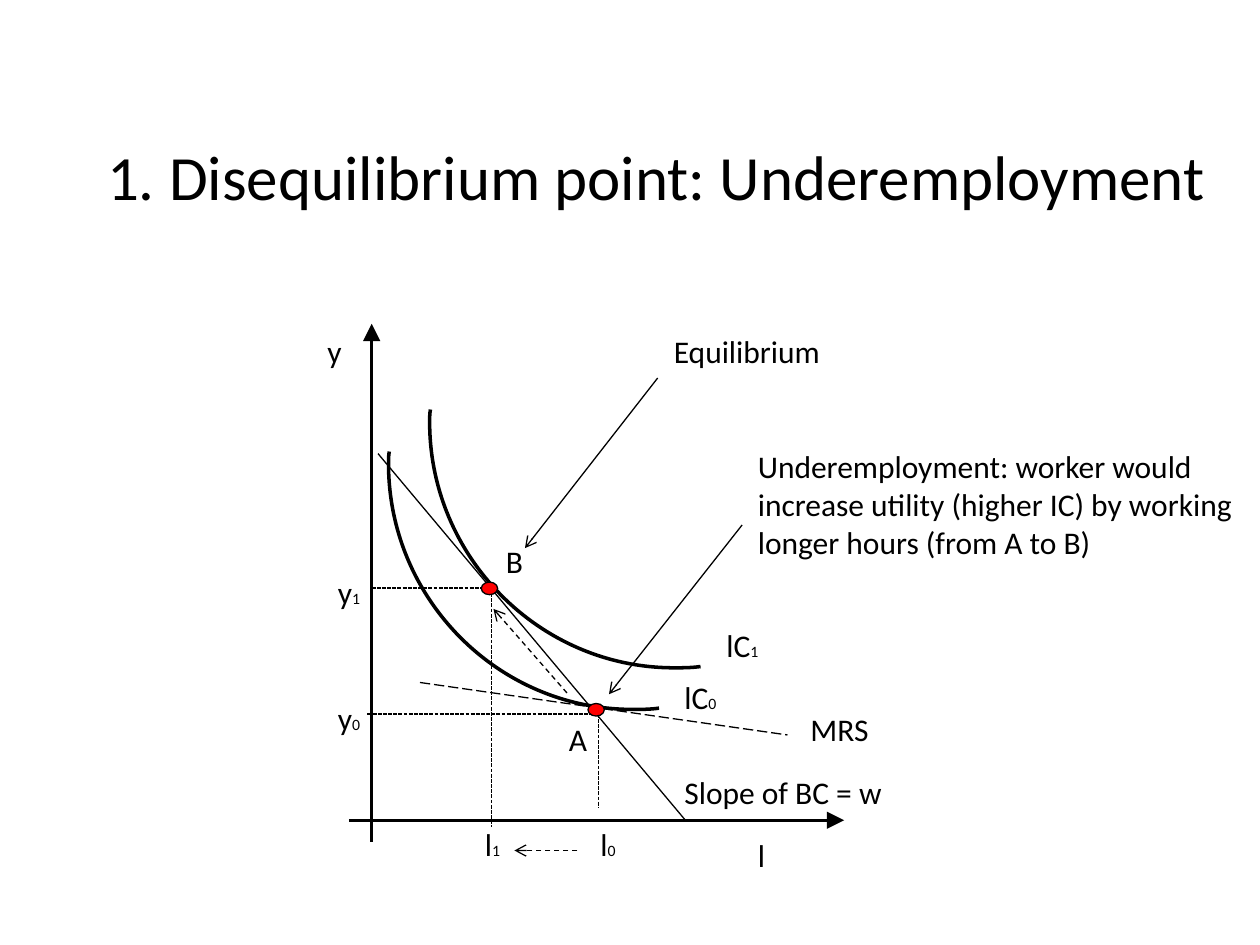
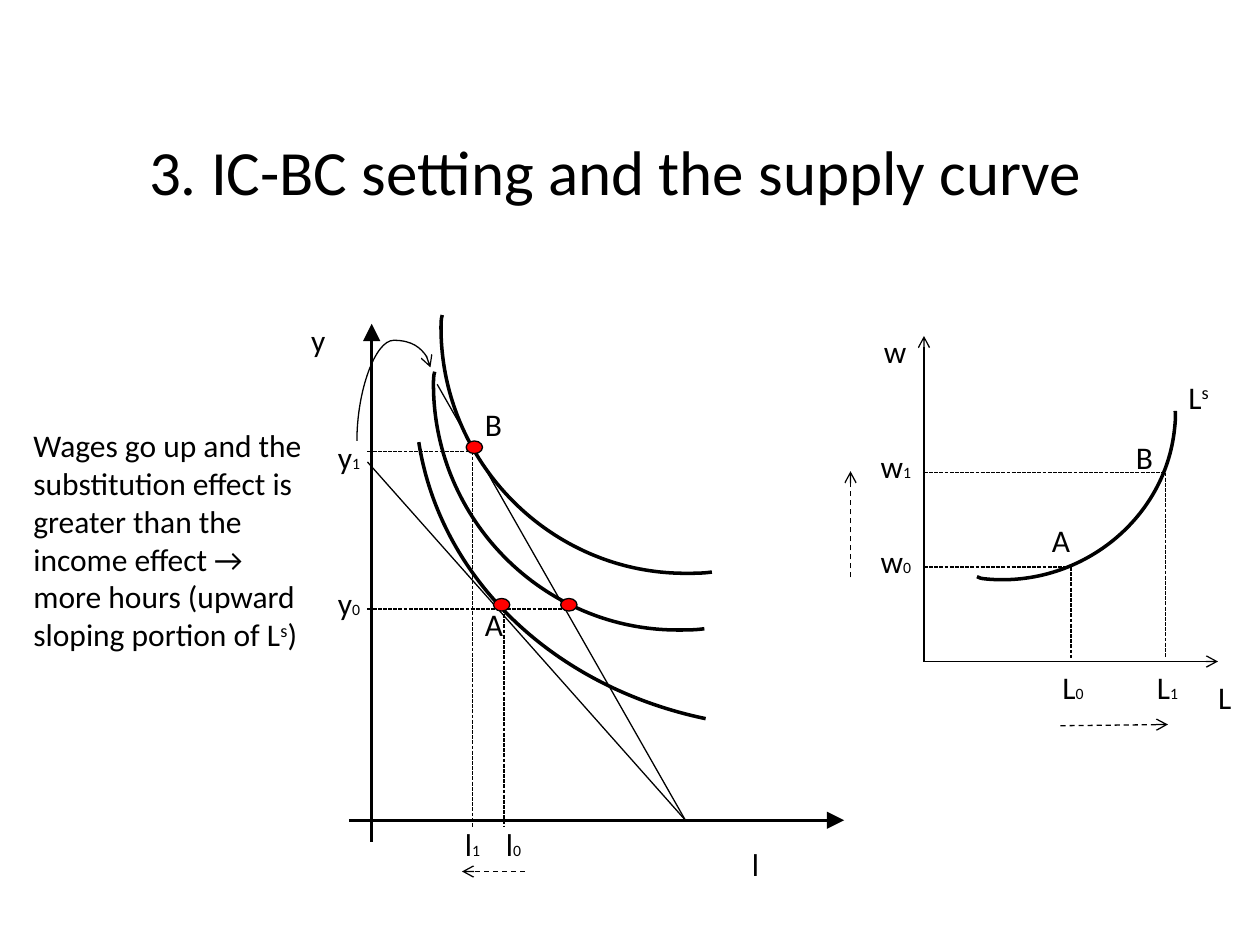
from lxml import etree
from pptx import Presentation
from pptx.dml.color import RGBColor
from pptx.enum.dml import MSO_LINE
from pptx.enum.shapes import MSO_CONNECTOR, MSO_SHAPE
from pptx.enum.text import MSO_ANCHOR, MSO_AUTO_SIZE, PP_ALIGN
from pptx.oxml.ns import qn
from pptx.util import Cm, Pt

STRAIGHT = MSO_CONNECTOR.STRAIGHT
CURVE = MSO_CONNECTOR.CURVE
ELLIPSE = MSO_SHAPE.OVAL
SQUARE_DOT = MSO_LINE.SQUARE_DOT
DASH = MSO_LINE.DASH
LONG_DASH = MSO_LINE.LONG_DASH
LEFT = PP_ALIGN.LEFT
TOP = MSO_ANCHOR.TOP
FIT_SHAPE = MSO_AUTO_SIZE.SHAPE_TO_FIT_TEXT

COLORS = {"ink": "000000", "point": "FF0000"}
INK = RGBColor.from_string(COLORS["ink"])
TITLE_FONT = {"name": "Calibri", "size": Pt(36), "bold": False}
LABEL_FONT = {"name": "Calibri", "size": Pt(18)}
TITLE_FRAME = {"word_wrap": False, "vertical_anchor": TOP, "auto_size": FIT_SHAPE}
AXIS_HEAD = {"type": "triangle", "w": "lg", "len": "lg"}
OPEN_HEAD = {"type": "arrow"}
LINE_STYLES = {
    "axis": (1.75, None, AXIS_HEAD),
    "guide": (0.75, SQUARE_DOT, None),
    "budget": (0.75, None, None),
    "tangent": (0.75, LONG_DASH, None),
    "pointer": (0.75, None, OPEN_HEAD),
    "shift": (0.75, DASH, OPEN_HEAD),
    "turn": (0.75, None, OPEN_HEAD),
}
POINT_WIDTH, POINT_HEIGHT = 0.13, 0.1
LABEL_HEIGHT = 0.4

AXES = [
    ("axis", 2.95, 6.68, 2.95, 2.57),
    ("axis", 2.77, 6.51, 6.7, 6.51),
]
INDIFFERENCE = [
    (0.21, 1.94), (0.14, 1.95), (0.07, 1.95), (0, 1.95), (-1.07, 1.95),
    (-1.94, 1.07), (-1.94, 0), (-1.94, -0.03), (-1.94, -0.07), (-1.93, -0.1),
]
LOW_INDIFFERENCE = [(5.41, 5.77), (4.25, 5.33), (3.5, 4.34), (3.5, 3.25)]
SUPPLY = [
    (9.29, 4.63), (9.24, 4.64), (9.19, 4.64), (9.14, 4.64), (8.41, 4.64),
    (7.81, 4.02), (7.8, 3.28), (7.8, 3.25), (7.8, 3.23), (7.81, 3.21),
]

SLIDES = [
    {
        "title": ("1. Disequilibrium point: Underemployment", 0.75, 1.04, 8.99, 0.71),
        "lines": [
            ("guide", 2.95, 4.67, 3.9, 4.67),
            ("guide", 3.9, 4.67, 3.9, 6.56),
            ("guide", 2.92, 5.67, 4.75, 5.67),
            ("guide", 4.75, 5.67, 4.75, 6.42),
            ("budget", 3, 3.6, 5.44, 6.51),
            ("tangent", 3.33, 5.42, 6.25, 5.83),
            ("pointer", 5.89, 4.17, 4.83, 5.51),
            ("pointer", 5.22, 3, 4.17, 4.35),
            ("shift", 4.5, 5.5, 3.92, 4.83),
            ("shift", 4.58, 6.75, 4.08, 6.75),
        ],
        "centers": [(5.02, 3.68), (5.35, 3.35)],
        "curves": [],
        "points": [(3.82, 4.62), (4.67, 5.58)],
        "labels": [
            ("y", 2.5, 2.58, 0.32),
            ("l", 5.92, 6.58, 0.26),
            ("MRS", 6.33, 5.58, 1.67),
            ("Slope of BC = w", 5.33, 6.08, 2),
            ("Underemployment: worker would increase utility (higher IC) "
             "by working longer hours (from A to B)", 5.92, 3.5, 4.08),
            ("Equilibrium", 5.25, 2.58, 4.08),
            ("l|_0", 4.67, 6.5, 0.32),
            ("l|_1", 3.75, 6.5, 0.32),
            ("lC|_0", 5.33, 5.33, 0.5),
            ("lC|_1", 5.67, 4.92, 0.5),
            ("A", 4.42, 5.67, 0.33),
            ("B", 3.92, 4.25, 0.33),
            ("y|_0", 2.58, 5.5, 0.38),
            ("y|_1", 2.58, 4.5, 0.38),
        ],
    },
    {
        "title": ("3. IC-BC setting and the supply curve", 1.08, 1, 7.72, 0.71),
        "lines": [
            ("budget", 2.92, 3.67, 5.44, 6.51),
            ("budget", 3.47, 3.05, 5.44, 6.51),
            ("turn", 3.42, 3.5, 2.83, 2.92),
            ("guide", 2.92, 4.83, 4.5, 4.83),
            ("guide", 4, 4.83, 4, 6.56),
            ("guide", 2.92, 3.58, 3.75, 3.58),
            ("guide", 3.75, 3.58, 3.75, 6.56),
            ("shift", 4.17, 6.92, 3.67, 6.92),
            ("pointer", 7.33, 5.25, 7.33, 2.67),
            ("pointer", 7.33, 5.25, 9.67, 5.25),
            ("guide", 7.33, 4.5, 8.5, 4.5),
            ("guide", 8.5, 4.5, 8.5, 5.22),
            ("guide", 7.33, 3.75, 9.25, 3.75),
            ("guide", 9.25, 3.75, 9.25, 5.22),
            ("shift", 8.42, 5.76, 9.27, 5.75),
            ("shift", 6.75, 4.58, 6.75, 3.74),
        ],
        "centers": [(5.44, 2.6), (5.38, 3.05)],
        "curves": [
            ((6.66, 3.25), LOW_INDIFFERENCE, 351.1),
            ((9.15, 3.27), SUPPLY, 276.3),
        ],
        "points": [(3.7, 3.5), (3.92, 4.75), (4.45, 4.75)],
        "labels": [
            ("y", 2.37, 2.5, 0.32),
            ("l", 5.87, 6.66, 0.26),
            ("Wages go up and the substitution effect is greater than the income "
             "effect → more hours (upward sloping portion of L|^s|)", 0.17, 3.33, 2.33),
            ("l|_0", 3.92, 6.5, 0.32),
            ("l|_1", 3.59, 6.5, 0.32),
            ("y|_0", 2.58, 4.58, 0.38),
            ("y|_1", 2.58, 3.43, 0.38),
            ("A", 3.75, 4.75, 0.33),
            ("B", 3.75, 3.17, 0.33),
            ("L", 9.57, 5.33, 0.31),
            ("w", 6.92, 2.58, 0.38),
            ("A", 8.25, 4.08, 0.33),
            ("B", 8.92, 3.43, 0.33),
            ("w|_0", 6.89, 4.25, 0.45),
            ("w|_1", 6.89, 3.5, 0.45),
            ("L|_1", 9.08, 5.25, 0.37),
            ("L|_0", 8.33, 5.25, 0.37),
            ("L|^s", 9.33, 2.95, 0.38),
        ],
    },
]


def place(*inches):
    twelfths = [round(value * 12) / 12 for value in inches]
    return [
        Cm(2.54 * (twelfth if abs(twelfth - value) < 0.005 else value))
        for twelfth, value in zip(twelfths, inches)
    ]


presentation = Presentation()
presentation.slide_width, presentation.slide_height = Cm(25.4), Cm(19.05)

for content in SLIDES:
    slide = presentation.slides.add_slide(presentation.slide_layouts[5])
    shapes = slide.shapes

    text, *box = content["title"]
    title = shapes.title
    title.left, title.top, title.width, title.height = place(*box)
    title.text_frame.text = text
    for name, value in TITLE_FRAME.items():
        setattr(title.text_frame, name, value)
    paragraph = title.text_frame.paragraphs[0]
    paragraph.alignment = LEFT
    for name, value in TITLE_FONT.items():
        setattr(paragraph.runs[0].font, name, value)
    paragraph.runs[0].font.color.rgb = INK

    for style, *ends in AXES + content["lines"]:
        width, dash, arrowhead = LINE_STYLES[style]
        kind = CURVE if style == "turn" else STRAIGHT
        connector = shapes.add_connector(kind, *place(*ends))
        connector.line.color.rgb = INK
        connector.line.width = Pt(width)
        if dash:
            connector.line.dash_style = dash
        properties = connector._element.spPr
        if arrowhead:
            etree.SubElement(properties.find(qn("a:ln")), qn("a:tailEnd"), arrowhead)
        etree.SubElement(properties, qn("a:effectLst"))
        if style == "turn":
            properties.find(qn("a:xfrm")).set("rot", "5400000")
            adjustments = properties.find(qn("a:prstGeom")).find(qn("a:avLst"))
            etree.SubElement(adjustments, qn("a:gd"), name="adj1", fmla="val 136900")

    indifference_curves = [
        ((center_x, center_y), [(center_x + x, center_y + y) for x, y in INDIFFERENCE], 0)
        for center_x, center_y in content["centers"]
    ]
    for center, controls, rotation in indifference_curves + content["curves"]:
        start, *rest = [place(*control) for control in controls]
        builder = shapes.build_freeform(*place(*center))
        builder.move_to(*start)
        builder.add_line_segments(rest, close=False)
        curve = builder.convert_to_shape()
        curve.rotation = rotation
        curve.shadow.inherit = False
        curve.fill.background()
        curve.line.color.rgb = INK
        curve.line.width = Pt(2)
        outline = next(curve._element.iter(qn("a:path")))
        segments = outline.findall(qn("a:lnTo"))
        for first in range(0, len(segments), 3):
            bend = etree.SubElement(outline, qn("a:cubicBezTo"))
            for segment in segments[first:first + 3]:
                bend.append(segment[0])
                outline.remove(segment)

    for left, top in content["points"]:
        point = shapes.add_shape(ELLIPSE, *place(left, top, POINT_WIDTH, POINT_HEIGHT))
        point.shadow.inherit = False
        point.fill.solid()
        point.fill.fore_color.rgb = RGBColor.from_string(COLORS["point"])
        point.line.color.rgb = INK
        point.line.width = Pt(0.75)

    for text, left, top, width in content["labels"]:
        label = shapes.add_textbox(*place(left, top, width, LABEL_HEIGHT))
        label.text_frame.word_wrap = width > 1
        label.text_frame.auto_size = FIT_SHAPE
        paragraph = label.text_frame.paragraphs[0]
        for part in text.split("|"):
            run = paragraph.add_run()
            run.text = part.lstrip("_^")
            for name, value in LABEL_FONT.items():
                setattr(run.font, name, value)
            run.font.color.rgb = INK
            if part.startswith("_"):
                run.font.size = Pt(9)
            if part.startswith("^"):
                run._r.get_or_add_rPr().set("baseline", "30000")

presentation.save("out.pptx")
